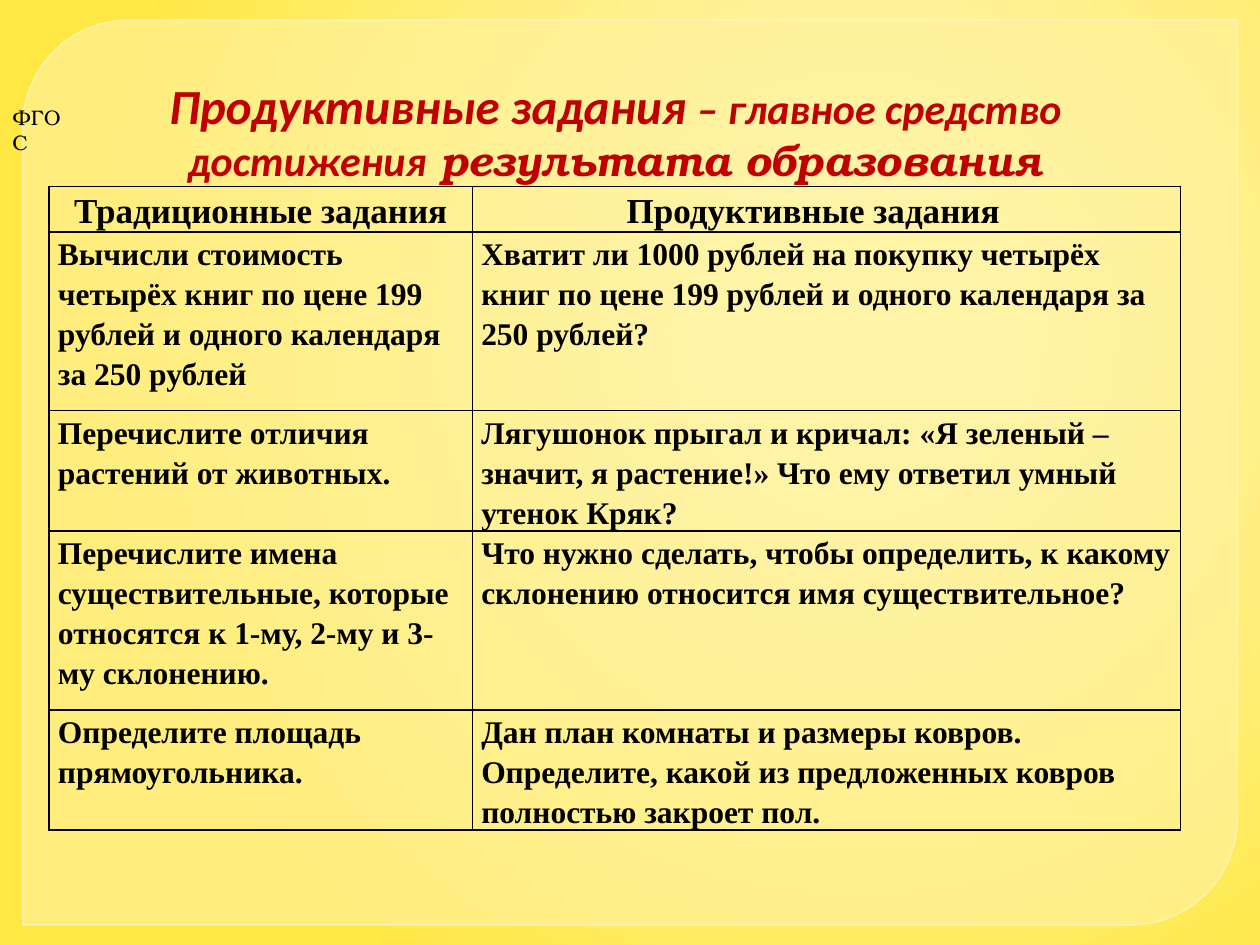
from dataclasses import dataclass

from lxml.etree import SubElement
from pptx import Presentation
from pptx.dml.color import RGBColor
from pptx.enum.shapes import MSO_SHAPE as Shape
from pptx.enum.text import MSO_ANCHOR as Anchor, PP_ALIGN as Align
from pptx.oxml import parse_xml
from pptx.oxml.ns import nsdecls, qn
from pptx.util import Inches, Pt

W, H = 10, 7.5
COLORS = {"glow": "FFF6BC", "pale": "FFF5B6", "edge": "FFE844", "panel": "FFF29D",
          "rim": "FFF6B9", "title": "C00000", "ink": "000000"}
SANS, DECOR, SERIF = "Calibri", "TeX Gyre Bonum", "Times New Roman"


@dataclass
class Row:
    height: float
    traditional: str
    productive: str


COLS = (3.36, 5.62)
ROWS = [
    Row(0.36, "Традиционные задания", "Продуктивные задания"),
    Row(1.42, "Вычисли стоимость четырёх книг по цене 199 рублей и одного календаря за 250 рублей",
        "Хватит ли 1000 рублей на покупку четырёх книг по цене 199 рублей и одного календаря за 250 рублей?"),
    Row(0.95, "Перечислите отличия растений от животных.",
        "Лягушонок прыгал и кричал: «Я зеленый – значит, я растение!» Что ему ответил умный утенок Кряк?"),
    Row(1.42, "Перечислите имена существительные, которые относятся к 1-му, 2-му и 3-му склонению.",
        "Что нужно сделать, чтобы определить, к какому склонению относится имя существительное?"),
    Row(0.95, "Определите площадь прямоугольника.",
        "Дан план комнаты и размеры ковров. Определите, какой из предложенных ковров полностью закроет пол."),
]


def rgb(name: str) -> RGBColor:
    return RGBColor.from_string(COLORS[name])


def add_run(p, text: str, *, size: float, font: str, color: str = "ink",
            bold: bool = False, italic: bool = False) -> None:
    r = p.add_run()
    r.text = text
    f = r.font
    f.size, f.name, f.bold, f.italic = Pt(size), font, bold, italic
    f.color.rgb = rgb(color)
    for tag in ("a:ea", "a:cs"):
        SubElement(r._r.get_or_add_rPr(), qn(tag), typeface=font)


def add_text(slide, box: tuple, *, anchor=Anchor.TOP, align=Align.LEFT, wrap: bool = True):
    """Add a text box and return its first paragraph."""
    tf = slide.shapes.add_textbox(*map(Inches, box)).text_frame
    tf.word_wrap, tf.vertical_anchor = wrap, anchor
    p = tf.paragraphs[0]
    p.alignment = align
    return p


def set_alpha(fill, percent: int) -> None:
    clr = fill._xPr.find(qn("a:solidFill"))[0]
    SubElement(clr, qn("a:alpha"), val=str(percent * 1000))


def paint_background(slide) -> None:
    slide.background.fill.gradient()
    old = slide.element.xpath(".//p:bg//a:gradFill")[0]
    stops = "".join(f'<a:gs pos="{pos * 1000}"><a:srgbClr val="{COLORS[c]}"/></a:gs>'
                    for pos, c in ((0, "glow"), (20, "pale"), (100, "edge")))
    old.getparent().replace(old, parse_xml(
        f'<a:gradFill {nsdecls("a")} rotWithShape="1"><a:gsLst>{stops}</a:gsLst>'
        '<a:path path="circle"><a:fillToRect l="68000" t="35000" r="32000" b="65000"/>'
        '</a:path></a:gradFill>'))


def add_panel(slide) -> None:
    sp = slide.shapes.add_shape(Shape.ROUND_2_DIAG_RECTANGLE,
                                *map(Inches, (0.18, 0.16, W - 0.36, H - 0.32)))
    sp.shadow.inherit = False
    sp.adjustments[0], sp.adjustments[1] = 0.118, 0
    sp.fill.solid()
    sp.fill.fore_color.rgb = rgb("panel")
    set_alpha(sp.fill, 65)
    sp.line.width = Pt(0.87)
    sp.line.color.rgb = rgb("rim")
    set_alpha(sp.line.fill, 88)


def set_borders(cell) -> None:
    tc_pr = cell._tc.get_or_add_tcPr()
    for i, side in enumerate(("lnL", "lnR", "lnT", "lnB")):
        tc_pr.insert(i, parse_xml(
            f'<a:{side} {nsdecls("a")} w="{Pt(1)}"><a:solidFill>'
            f'<a:srgbClr val="{COLORS["ink"]}"/></a:solidFill></a:{side}>'))


def fill_cell(cell, text: str, *, header: bool, right: float) -> None:
    cell.fill.background()
    set_borders(cell)
    cell.margin_left, cell.margin_right = Inches(0.07), Inches(right)
    cell.margin_top = cell.margin_bottom = 0
    p = cell.text_frame.paragraphs[0]
    p.alignment = Align.CENTER if header else Align.LEFT
    p.line_spacing = 1.15
    add_run(p, text, size=20 if header else 18, font=SERIF, bold=True)


def add_tasks(slide) -> None:
    box = (0.39, 1.48, sum(COLS), sum(row.height for row in ROWS))
    table = slide.shapes.add_table(len(ROWS), len(COLS), *map(Inches, box)).table
    table.first_row = table.horz_banding = False
    for col, width in zip(table.columns, COLS):
        col.width = Inches(width)
    for i, row in enumerate(ROWS):
        table.rows[i].height = Inches(row.height)
        for j, text in enumerate((row.traditional, row.productive)):
            # The second heading sits slightly left of centre
            right = 0.28 if (i, j) == (0, 1) else 0.07
            fill_cell(table.cell(i, j), text, header=i == 0, right=right)


def main() -> None:
    prs = Presentation()
    prs.slide_width, prs.slide_height = Inches(W), Inches(H)
    slide = prs.slides.add_slide(prs.slide_layouts[6])

    # Backdrop
    paint_background(slide)
    add_panel(slide)

    # Table of tasks
    add_tasks(slide)

    # Title
    p = add_text(slide, (1.02, 0.54, 7.73, 0.98), anchor=Anchor.MIDDLE, align=Align.CENTER)
    for text, size, font in (("Продуктивные задания ", 28, SANS),
                             ("– главное средство достижения", 24, SANS),
                             (" результата образования", 24, DECOR)):
        add_run(p, text, size=size, font=font, color="title", bold=True, italic=True)

    # Side label, kept on one line
    p = add_text(slide, (0, 0.78, 0.7, 0.37), wrap=False)
    add_run(p, "ФГОС", size=12, font=DECOR)

    prs.save("out.pptx")


if __name__ == "__main__":
    main()
